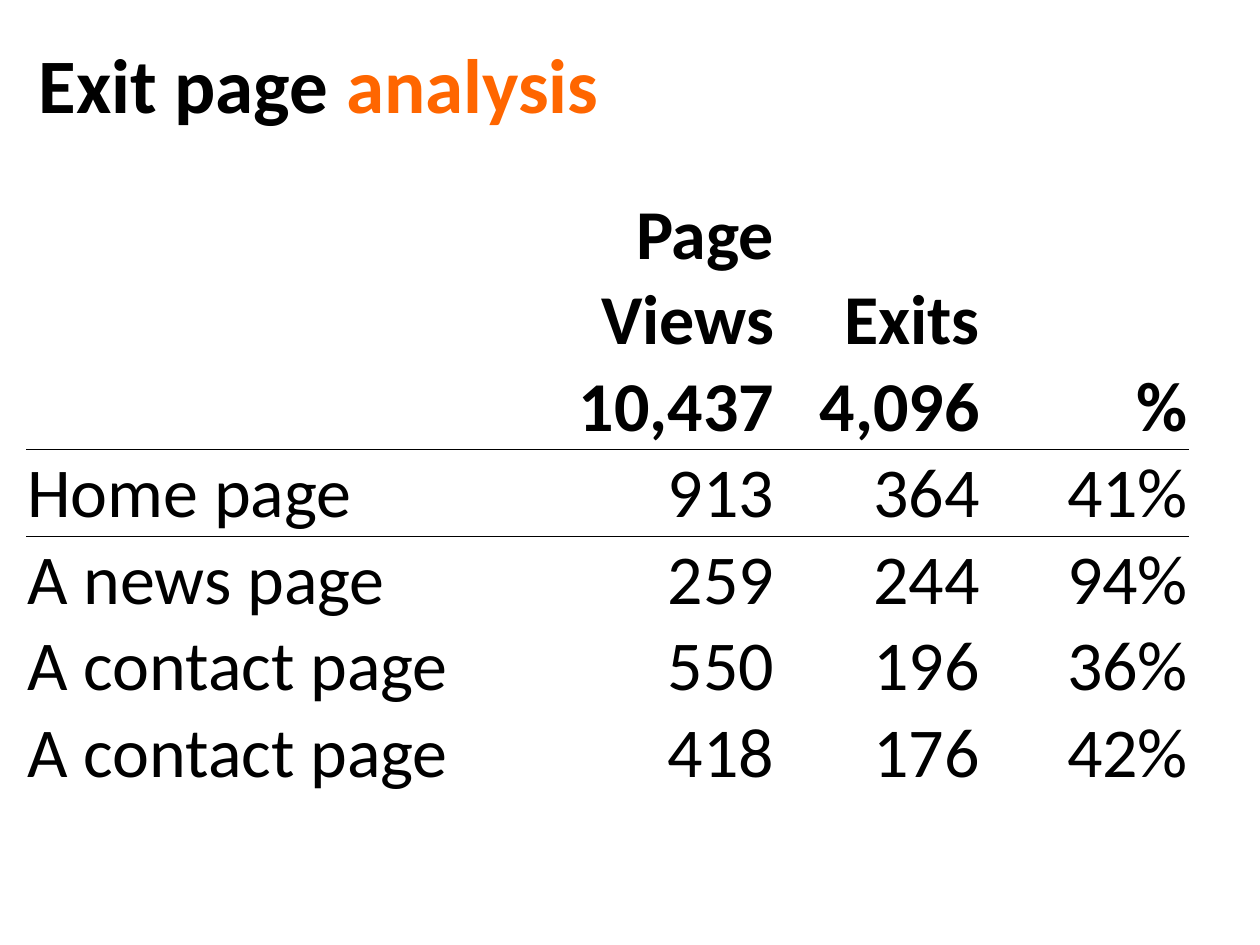
from lxml.etree import SubElement
from pptx import Presentation
from pptx.dml.color import RGBColor
from pptx.enum.text import MSO_ANCHOR, MSO_AUTO_SIZE, PP_ALIGN
from pptx.oxml.ns import qn
from pptx.util import Pt

NO_STYLE = "{2D5ABB26-0587-4C30-8999-92F81FD0307C}"
BLACK, ORANGE = "000000", "FF6600"


def add_run(p, text, size, color, bold):
    r = p.add_run()
    r.text = text
    for name, value in {"name": "Calibri", "size": Pt(size), "bold": bold}.items():
        setattr(r.font, name, value)
    r.font.color.rgb = RGBColor.from_string(color)


def add_border(cell, side):
    ln = SubElement(cell._tc.get_or_add_tcPr(), qn(f"a:ln{side}"), w=str(Pt(0.5)))
    SubElement(SubElement(ln, qn("a:solidFill")), qn("a:srgbClr"), val=BLACK)


prs = Presentation()
prs.slide_width, prs.slide_height = Pt(720), Pt(540)
s = prs.slides.add_slide(prs.slide_layouts[5])

# Title
title = s.shapes.title
title.left, title.top, title.width, title.height = Pt(15), Pt(13), Pt(648), Pt(68)
tf = title.text_frame
tf.auto_size = MSO_AUTO_SIZE.NONE
tf.vertical_anchor = MSO_ANCHOR.MIDDLE
p = tf.paragraphs[0]
p.alignment = PP_ALIGN.LEFT
add_run(p, "Exit page ", 44, BLACK, True)
add_run(p, "analysis", 44, ORANGE, True)

# Exit page table: two header rows, then one row per page
rows = [
    ("", "Page Views", "Exits", ""),
    ("", "10,437", "4,096", "%"),
    ("Home page", "913", "364", "41%"),
    ("A news page", "259", "244", "94%"),
    ("A contact page", "550", "196", "36%"),
    ("A contact page", "418", "176", "42%"),
]
widths = [290.5, 137.5, 117.5, 119]
heights = [98] + [49] * 5
header_rows = 2
cell_format = {
    "margin_left": Pt(0.7),
    "margin_right": Pt(0.7),
    "margin_top": Pt(0.7),
    "margin_bottom": 0,
    "vertical_anchor": MSO_ANCHOR.BOTTOM,
}

table = s.shapes.add_table(len(rows), len(widths), Pt(15), Pt(109.4),
                           Pt(sum(widths)), Pt(sum(heights))).table
table.first_row = table.horz_banding = False
table._tbl.tblPr.find(qn("a:tableStyleId")).text = NO_STYLE
for column, width in zip(table.columns, widths):
    column.width = Pt(width)

for i, (values, height) in enumerate(zip(rows, heights)):
    table.rows[i].height = Pt(height)
    for j, text in enumerate(values):
        cell = table.cell(i, j)
        for name, value in cell_format.items():
            setattr(cell, name, value)
        if i == header_rows - 1:
            add_border(cell, "B")
        elif i == header_rows:
            add_border(cell, "T")
        cell.fill.background()
        p = cell.text_frame.paragraphs[0]
        p.alignment = PP_ALIGN.RIGHT if j else PP_ALIGN.LEFT
        if text:
            add_run(p, text, 40, BLACK, i < header_rows)

prs.save("out.pptx")
